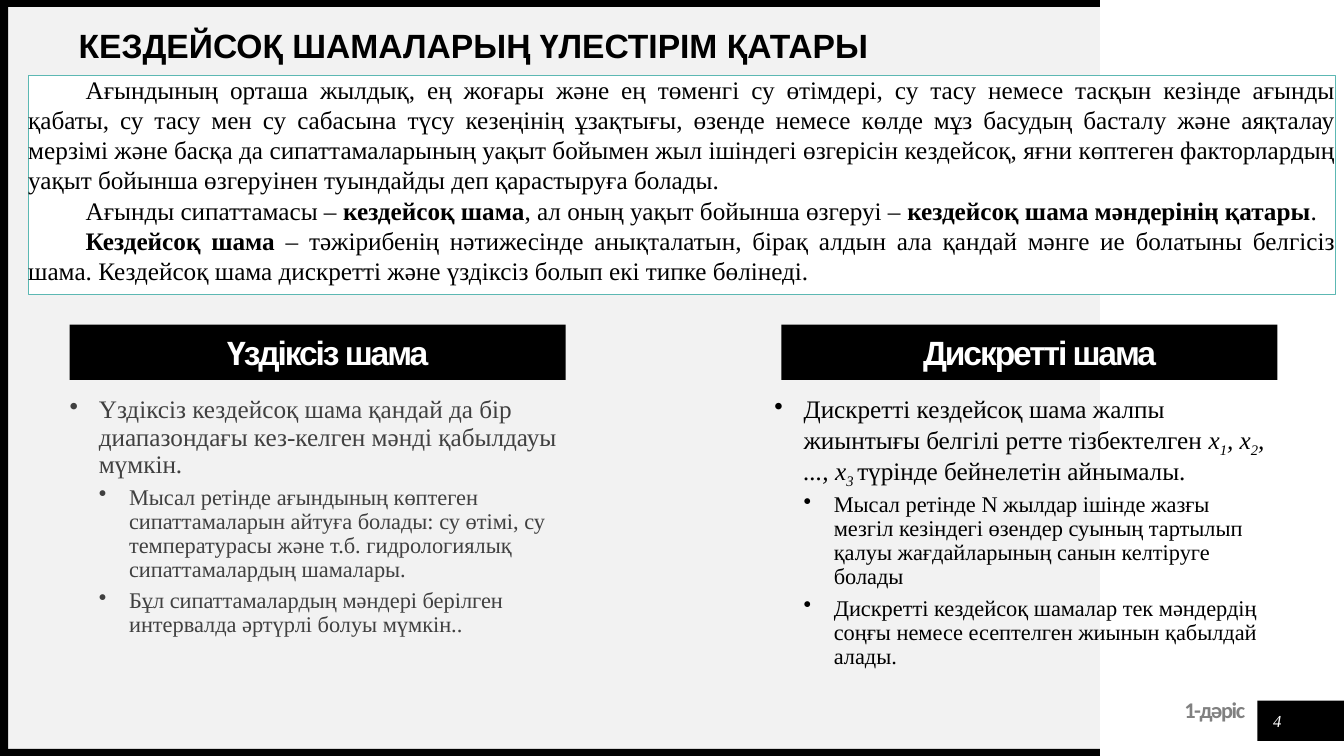
from pptx import Presentation, util as u
from pptx.dml.color import RGBColor
from pptx.enum import shapes, text

prs = Presentation()
prs.slide_width, prs.slide_height = u.Inches(13.33), u.Inches(7.5)
slide = prs.slides.add_slide(prs.slide_layouts[5])  # title only
W, H = 13.33, 7.5
BAR = 0.07                      # thickness of the black edge
PANEL_W = 10.91                 # width of the grey area
FRAME_X, FRAME_Y = 0.28, 0.75   # corner of the introduction frame
COL_W, HEAD_Y, BODY_Y = 4.92, 3.22, 3.94
SERIF = "Times New Roman"
LEFT, CENTER, RIGHT, JUSTIFY = (text.PP_ALIGN.LEFT, text.PP_ALIGN.CENTER,
                                text.PP_ALIGN.RIGHT, text.PP_ALIGN.JUSTIFY)


def box(x, y, w, h, fill=None):
    """Filled rectangle, or a plain text box when there is no fill."""
    at = [u.Inches(v) for v in (x, y, w, h)]
    if fill is None:
        return slide.shapes.add_textbox(*at)
    sp = slide.shapes.add_shape(shapes.MSO_SHAPE.RECTANGLE, *at)
    sp.shadow.inherit = False
    sp.fill.solid()
    sp.fill.fore_color.rgb = RGBColor.from_string(fill)
    sp.line.fill.background()
    return sp


def write(sp, paragraphs, font, color, align=LEFT, insets=(0, 0, 0, 0), middle=True,
          bold=None, italic=None, line=None, spacing=0):
    """Each paragraph: (size, level, left, first-line indent, bullet, space before, runs)."""
    tf = sp.text_frame
    tf.word_wrap = True
    tf.auto_size = text.MSO_AUTO_SIZE.NONE
    tf.vertical_anchor = text.MSO_ANCHOR.MIDDLE if middle else text.MSO_ANCHOR.TOP
    tf.margin_left, tf.margin_top, tf.margin_right, tf.margin_bottom = map(u.Inches, insets)
    for n, (size, level, left, indent, bullet, before, runs) in enumerate(paragraphs):
        p = tf.paragraphs[0] if n == 0 else tf.add_paragraph()
        p.level, p.alignment, p.line_spacing = level, align, line
        p.space_before = u.Pt(before)
        p.font.name, p.font.size, p.font.bold, p.font.italic = font, u.Pt(size), bold, italic
        p.font.color.rgb = RGBColor.from_string(color)
        pPr = p._p.get_or_add_pPr()
        pPr.set("marL", str(u.Inches(left)))
        pPr.set("indent", str(u.Inches(indent)))
        if bullet:
            mark = pPr.makeelement(
                "{http://schemas.openxmlformats.org/drawingml/2006/main}buChar", {"char": "•"})
            pPr.find("{*}defRPr").addprevious(mark)
        for words, style in runs:
            r = p.add_run()
            r.text = words
            f = r.font
            f.name, f.size = font, u.Pt(size)
            f.color.rgb = RGBColor.from_string(color)
            f.bold = True if "b" in style else bold
            f.italic = True if "i" in style else italic
            if "_" in style:
                f._element.set("baseline", "-25000")
            if spacing:
                f._element.set("spc", str(spacing))


# Background panel, black edges and corner block
box(BAR, BAR, PANEL_W - BAR, H - 2 * BAR, "F2F2F2")
for edge in ((0, 0, PANEL_W, BAR), (0, H - BAR, PANEL_W, BAR), (0, 0, BAR + 0.01, H)):
    box(*edge, "000000")
box(W - 0.86, 6.95, 0.86, 0.4, "000000")

# Footer and slide number
write(box(10.53, 6.94, 1.82, 0.25), [(16, 0, 0, 0, False, 0, [("1-дәріс", "")])],
      "Calibri", "808080", RIGHT, (0, 0.04, 0, 0), False, bold=True,
      line=u.Pt(14), spacing=-100)
write(box(12.52, 7, 0.3, 0.3), [(12, 0, 0, 0, False, 0, [("4", "")])],
      SERIF, "FFFFFF", CENTER, italic=True)

# Title, brought in front of the panel
title = slide.shapes.title
title.left, title.top, title.width, title.height = map(u.Inches, (FRAME_X, 0.2, 10.96, 0.55))
write(title, [(24, 0, 0, 0.5, False, 0, [("КЕЗДЕЙСОҚ ШАМАЛАРЫҢ ҮЛЕСТІРІМ ҚАТАРЫ", "")])],
      "Arial", "000000", bold=True, line=0.9)
slide.shapes._spTree.append(title._element)

# Introduction frame
intro = [
    [("Ағындының орташа жылдық, ең жоғары және ең төменгі су өтімдері, су тасу немесе тасқын "
      "кезінде ағынды қабаты, су тасу мен су сабасына түсу кезеңінің ұзақтығы, өзенде немесе "
      "көлде мұз басудың басталу және аяқталау мерзімі және басқа да сипаттамаларының уақыт "
      "бойымен жыл ішіндегі өзгерісін кездейсоқ, яғни көптеген факторлардың уақыт бойынша "
      "өзгеруінен туындайды деп қарастыруға болады.", "")],
    [("Ағынды сипаттамасы – ", ""), ("кездейсоқ шама", "b"),
     (", ал оның уақыт бойынша өзгеруі – ", ""),
     ("кездейсоқ шама мәндерінің қатары", "b"), (".", "")],
    [("Кездейсоқ шама ", "b"),
     ("– тәжірибенің нәтижесінде анықталатын, бірақ алдын ала қандай мәнге ие болатыны "
      "белгісіз шама. Кездейсоқ шама дискретті және үздіксіз болып екі типке бөлінеді.", "")],
]
frame = box(FRAME_X, FRAME_Y, 12.97, 2.17, "FFFFFF")
frame.line.color.rgb = RGBColor.from_string("5CB8B3")
frame.line.width = u.Pt(0.75)
write(frame, [(18, 0, 0, 0.57, False, 0, runs) for runs in intro],
      SERIF, "000000", JUSTIFY, (0, 0, 0, 0.1))

# Two columns: heading x, body x, text colour, heading, lead runs, examples
columns = [
    (0.69, 0.69, "404040", "Үздіксіз шама",
     [("Үздіксіз кездейсоқ шама қандай да бір диапазондағы кез-келген мәнді қабылдауы "
       "мүмкін.", "")],
     ["Мысал ретінде ағындының көптеген сипаттамаларын айтуға болады: су өтімі, су "
      "температурасы және т.б. гидрологиялық сипаттамалардың шамалары.",
      "Бұл сипаттамалардың мәндері берілген интервалда әртүрлі болуы мүмкін.."]),
    (7.75, 7.68, "000000", "Дискретті шама",
     [("Дискретті кездейсоқ шама жалпы жиынтығы белгілі ретте тізбектелген ", ""),
      ("х", "i"), ("1", "i_"), (", х", "i"), ("2", "i_"), (", ..., х", "i"), ("3 ", "i_"),
      ("түрінде бейнелетін айнымалы.", "")],
     ["Мысал ретінде N жылдар ішінде жазғы мезгіл кезіндегі өзендер суының тартылып қалуы "
      "жағдайларының санын келтіруге болады",
      "Дискретті кездейсоқ шамалар тек мәндердің соңғы немесе есептелген жиынын қабылдай "
      "алады."]),
]
for head_x, body_x, color, heading, lead, examples in columns:
    write(box(head_x, HEAD_Y, COL_W, 0.55, "000000"),
          [(24, 0, 0, 0, False, 0, [(heading, "")])], "Arial", "FFFFFF", CENTER,
          (0.2, 0.04, 0, 0), bold=True, line=0.9, spacing=-150)
    write(box(body_x, BODY_Y, COL_W, 2.76),
          [(18, 0, 0.29, -0.29, True, 10, lead)]
          + [(16, 1, 0.59, -0.3, True, 5, [(words, "")]) for words in examples],
          SERIF, color, middle=False, line=0.9)

prs.save("out.pptx")
